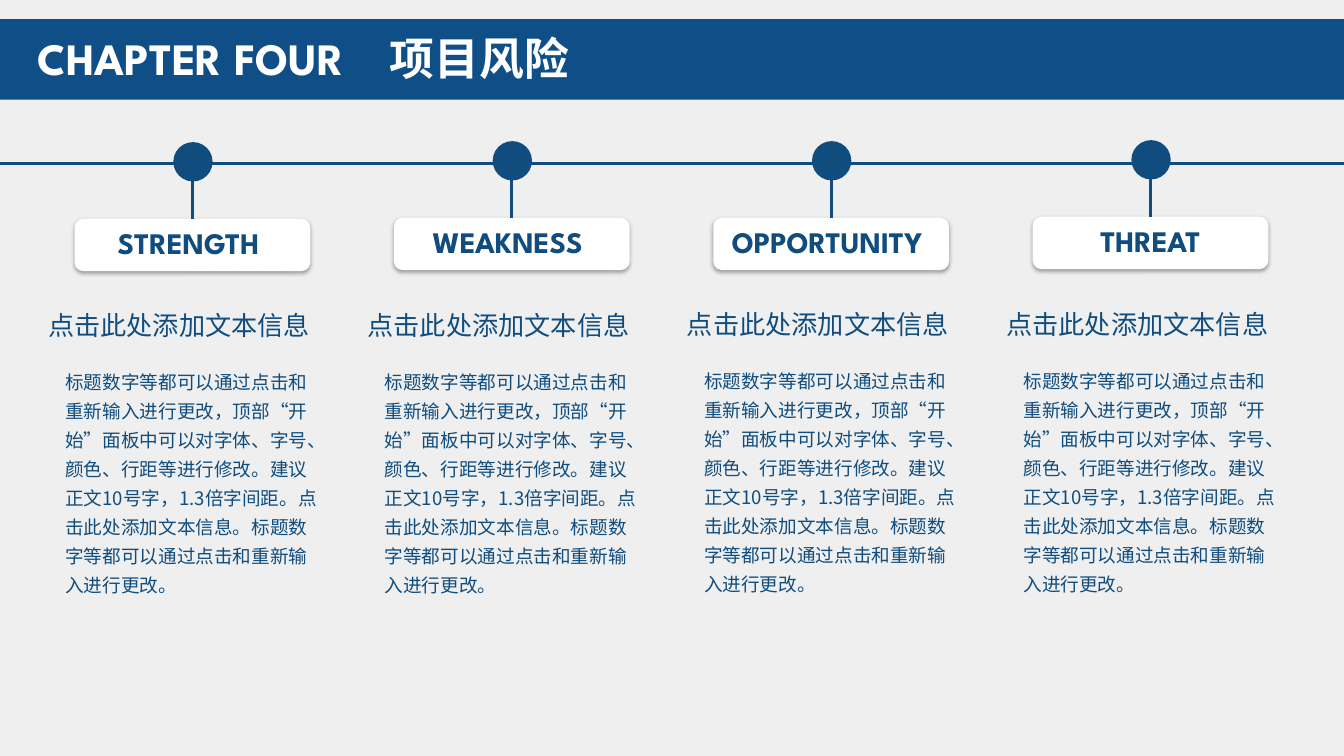
from dataclasses import dataclass

from lxml.etree import SubElement
from pptx import Presentation
from pptx.dml.color import RGBColor
from pptx.enum.shapes import MSO_CONNECTOR as Link, MSO_SHAPE as Kind
from pptx.enum.text import MSO_ANCHOR as Anchor, MSO_AUTO_SIZE as Fit, PP_ALIGN as Align
from pptx.oxml.ns import qn
from pptx.util import Pt

PX = 9144
BLUE = RGBColor(0x10, 0x4D, 0x7E)
BAND = RGBColor(0x10, 0x4E, 0x87)
WHITE = RGBColor(0xFF, 0xFF, 0xFF)
PALE = RGBColor(0xEF, 0xEF, 0xEF)
HEAD = "League Spartan"
TEXT = "Noto Sans CJK SC"
PITCH = 317
LEAD = "点击此处添加文本信息"
BODY = (
    "标题数字等都可以通过点击和重新输入进行更改，顶部“开始”面板中可以对字体、字号、"
    "颜色、行距等进行修改。建议正文10号字，1.3倍字间距。点击此处添加文本信息。"
    "标题数字等都可以通过点击和重新输入进行更改。"
)


@dataclass(frozen=True)
class Box:
    left: int
    top: int
    width: int
    height: int

    def move(self, right: int, up: int) -> "Box":
        return Box(self.left + right, self.top - up, self.width, self.height)

    def emu(self) -> tuple[int, int, int, int]:
        return self.left * PX, self.top * PX, self.width * PX, self.height * PX


@dataclass(frozen=True)
class Style:
    face: str
    size: float
    color: RGBColor
    bold: bool = False
    align: Align = Align.LEFT
    space: float = 1.0


TITLE = Style(HEAD, 32, WHITE, True)
LABEL = Style(HEAD, 21.3, BLUE, True, Align.CENTER)
INTRO = Style(TEXT, 18.7, BLUE)
PROSE = Style(TEXT, 13.3, BLUE, space=1.3)

DOT = Box(172, 141, 39, 39)
CARD = Box(74, 217, 234, 52)
NOTE = Box(38, 302, 281, 42)
COPY = Box(55, 356, 271, 243)


def write(frame, text: str, style: Style) -> None:
    line = frame.paragraphs[0]
    line.text = text
    line.alignment = style.align
    line.line_spacing = style.space
    font = line.font
    font.size = Pt(style.size)
    font.bold = style.bold
    font.color.rgb = style.color
    font.name = style.face
    base = line._p.pPr.find(qn("a:defRPr"))
    SubElement(base, qn("a:ea"), typeface=style.face)


def draw(slide, kind: Kind, box: Box, color: RGBColor):
    shape = slide.shapes.add_shape(kind, *box.emu())
    shape.shadow.inherit = False
    shape.fill.solid()
    shape.fill.fore_color.rgb = color
    shape.line.fill.background()
    return shape


def join(slide, x: int, y: int, x2: int, y2: int):
    line = slide.shapes.add_connector(Link.STRAIGHT, x * PX, y * PX, x2 * PX, y2 * PX)
    line.line.color.rgb = BLUE
    line.line.width = Pt(2)
    SubElement(line._element.spPr, qn("a:effectLst"))
    return line


def shade(shape) -> None:
    effect = shape._element.spPr.find(qn("a:effectLst"))
    drop = SubElement(effect, qn("a:outerShdw"), blurRad="39370", dist="22860",
                      dir="5400000", algn="t", rotWithShape="0")
    color = SubElement(drop, qn("a:srgbClr"), val="000000")
    SubElement(color, qn("a:alpha"), val="35000")


def note(slide, box: Box, text: str, style: Style, wrap: bool) -> None:
    frame = slide.shapes.add_textbox(*box.emu()).text_frame
    frame.word_wrap = wrap
    frame.auto_size = Fit.SHAPE_TO_FIT_TEXT
    write(frame, text, style)


def head(slide) -> None:
    draw(slide, Kind.RECTANGLE, Box(0, 19, 1334, 80), BAND)
    title = slide.shapes.title
    title.left, title.top, title.width, title.height = Box(27, 25, 659, 64).emu()
    frame = title.text_frame
    frame.word_wrap = True
    frame.auto_size = Fit.SHAPE_TO_FIT_TEXT
    frame.vertical_anchor = Anchor.TOP
    write(frame, "CHAPTER FOUR\t项目风险", TITLE)
    base = frame.paragraphs[0]._p.pPr.find(qn("a:defRPr"))
    tabs = base.makeelement(qn("a:tabLst"))
    SubElement(tabs, qn("a:tab"), pos=str(350 * PX), algn="l")
    base.addprevious(tabs)
    slide.shapes._spTree.append(title._element)


def column(slide, index: int, label: str) -> None:
    right = index * PITCH
    rise, lift = (index + 1) // 2, index // 2
    dot = DOT.move(right, rise)
    draw(slide, Kind.OVAL, dot, BLUE)

    box = CARD.move(right, rise)
    card = draw(slide, Kind.ROUNDED_RECTANGLE, box, WHITE)
    shade(card)
    frame = card.text_frame
    frame.word_wrap = True
    frame.vertical_anchor = Anchor.MIDDLE
    frame.margin_top = 0
    frame.margin_bottom = 4 * PX
    write(frame, label, LABEL)

    mid = box.left + box.width // 2
    stem = join(slide, mid, dot.top + dot.height, mid, box.top)
    stem.end_connect(card, 0)

    note(slide, COPY.move(right, lift), BODY, PROSE, True)
    note(slide, NOTE.move(right, lift), LEAD, INTRO, False)


def main() -> None:
    deck = Presentation()
    deck.slide_width, deck.slide_height = 1334 * PX, 750 * PX
    slide = deck.slides.add_slide(deck.slide_layouts[5])
    slide.background.fill.solid()
    slide.background.fill.fore_color.rgb = PALE
    head(slide)
    join(slide, 0, 162, 1334, 162)
    for index, label in enumerate(("STRENGTH ", "WEAKNESS ", "OPPORTUNITY ", "THREAT")):
        column(slide, index, label)
    deck.save("out.pptx")


if __name__ == "__main__":
    main()
